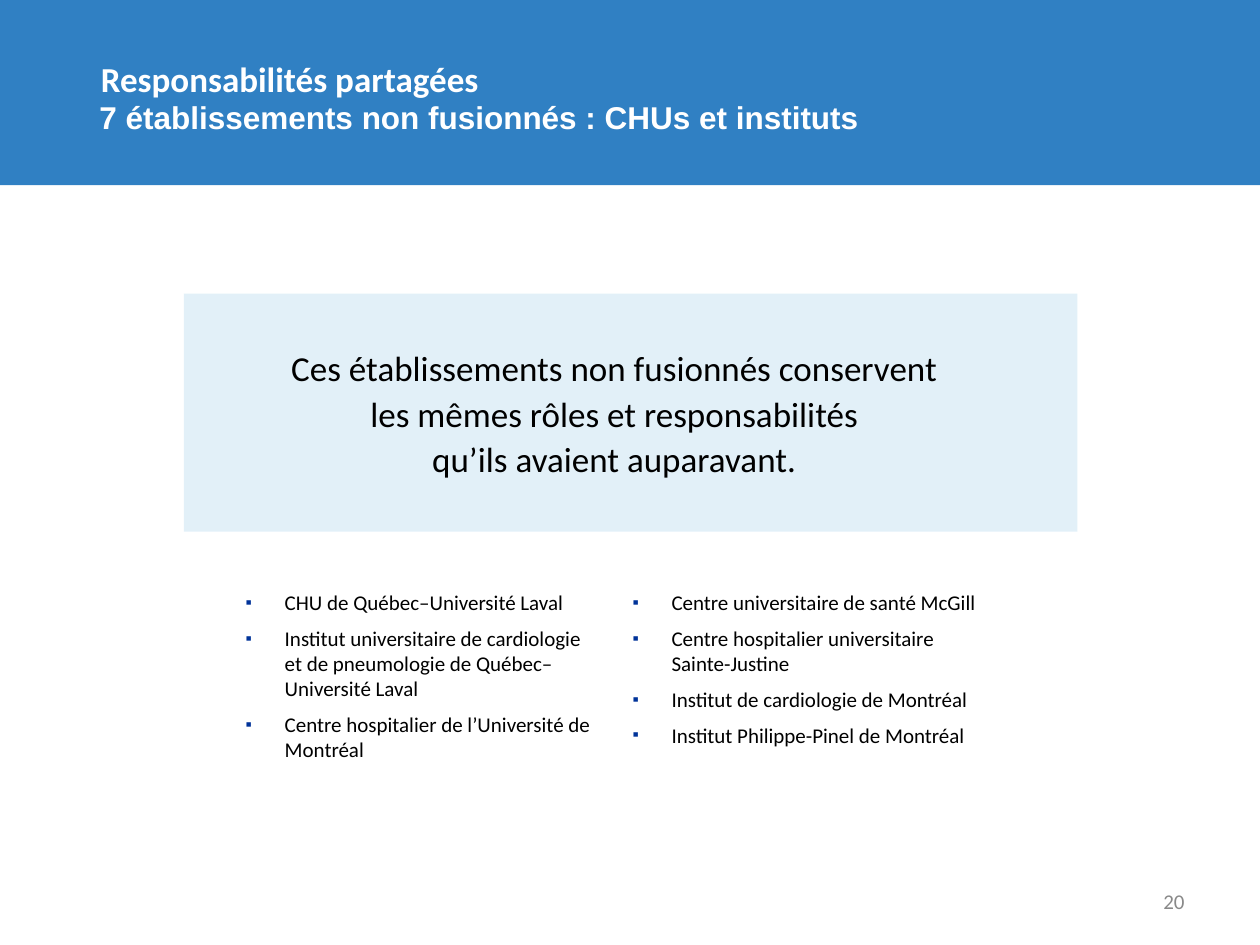
import pptx
import pptx.dml.color
import pptx.enum.shapes
import pptx.enum.text
import pptx.oxml
import pptx.oxml.ns
import pptx.util
from pptx.util import Inches

Pt = pptx.util.Pt
ALIGN = pptx.enum.text.PP_ALIGN
ANCHOR = pptx.enum.text.MSO_ANCHOR


def color(hex_value):
    return pptx.dml.color.RGBColor.from_string(hex_value)


def write(shape, box, lines, text_color, font, anchor=ANCHOR.TOP, bullet=False, **layout):
    """Place a text shape and fill it with formatted paragraphs."""
    shape.left, shape.top, shape.width, shape.height = map(Inches, box)
    frame = shape.text_frame
    frame.word_wrap = True
    frame.auto_size = pptx.enum.text.MSO_AUTO_SIZE.NONE
    frame.vertical_anchor = anchor
    frame.text = "\n".join(lines)
    for index, paragraph in enumerate(frame.paragraphs):
        if bullet:
            properties = paragraph._p.get_or_add_pPr()
            properties.set("marL", str(Inches(0.31)))
            properties.set("indent", str(-Inches(0.31)))
            for xml in BULLET:
                properties.append(pptx.oxml.parse_xml(xml))
        for name, value in layout.items():
            setattr(paragraph, name, value)
        if index == 0:
            paragraph.space_before = Pt(0)
        for run in paragraph.runs:
            for name, value in font.items():
                setattr(run.font, name, value)
            run.font.color.rgb = color(text_color)


NAMESPACE = pptx.oxml.ns.nsdecls("a")
BULLET = [
    f'<a:buClr {NAMESPACE}><a:srgbClr val="003399"/></a:buClr>',
    f'<a:buSzPct {NAMESPACE} val="85000"/>',
    f'<a:buFont {NAMESPACE} typeface="Arial"/>',
    f'<a:buChar {NAMESPACE} char="▪"/>',
]

presentation = pptx.Presentation()
presentation.slide_width = Inches(10)
presentation.slide_height = Inches(7.5)
slide = presentation.slides.add_slide(presentation.slide_layouts[3])
shapes = slide.shapes
title, *lists = slide.placeholders

# Header band and message panel, behind the text
panels = []
for box, fill in [((0, 0, 10, 1.47), "3080C3"), ((1.46, 2.33, 7.09, 1.89), "C6E3F3")]:
    panel = shapes.add_shape(pptx.enum.shapes.MSO_SHAPE.RECTANGLE, *map(Inches, box))
    panel.shadow.inherit = False
    panel.fill.solid()
    panel.fill.fore_color.rgb = color(fill)
    panel.line.fill.background()
    title._element.addprevious(panel._element)
    panels.append(panel)

# Half-transparent fill for the message panel
panel_color = panels[1]._element.spPr.find(".//" + pptx.oxml.ns.qn("a:srgbClr"))
panel_color.append(pptx.oxml.parse_xml(f'<a:alpha {NAMESPACE} val="50000"/>'))

# Title and subtitle
heading = {"anchor": ANCHOR.MIDDLE, "alignment": ALIGN.LEFT, "line_spacing": Pt(44)}
write(title, (0.7, 0.13, 8.27, 0.71), ["Responsabilités partagées"], "FFFFFF",
      {"name": "Calibri", "size": Pt(20), "bold": True}, **heading)
subtitle = shapes.add_textbox(0, 0, 0, 0)
write(subtitle, (0.69, 0.42, 8.27, 0.71),
      ["7 établissements non fusionnés : CHUs et instituts"], "FFFFFF",
      {"name": "Arial", "size": Pt(18), "bold": True}, **heading)

# Main message
message = shapes.add_textbox(0, 0, 0, 0)
write(message, (1.65, 2.73, 6.45, 1.15),
      ["Ces établissements non fusionnés conservent",
       "les mêmes rôles et responsabilités",
       "qu’ils avaient auparavant."],
      "000000", {"name": "Calibri", "size": Pt(20)}, alignment=ALIGN.CENTER,
      line_spacing=Pt(22), space_before=Pt(2), space_after=Pt(2))

# Two columns of institutions
small = {"name": "Calibri", "size": Pt(12)}
columns = [
    (1.85, 1.72, ["CHU de Québec–Université Laval",
                  "Institut universitaire de cardiologie et de pneumologie "
                  "de Québec–Université Laval",
                  "Centre hospitalier de l’Université de Montréal"]),
    (4.92, 1.6, ["Centre universitaire de santé McGill",
                 "Centre hospitalier universitaire Sainte-Justine",
                 "Institut de cardiologie de Montréal",
                 "Institut Philippe-Pinel de Montréal"]),
]
for placeholder, (left, height, institutions) in zip(lists, columns):
    write(placeholder, (left, 4.63, 2.99, height), institutions, "000000", small,
          bullet=True, space_before=Pt(6))

# Page number
page_number = shapes.add_textbox(0, 0, 0, 0)
write(page_number, (7.17, 6.95, 2.33, 0.4), ["20"], "898989", small,
      anchor=ANCHOR.MIDDLE, alignment=ALIGN.RIGHT)

presentation.save("out.pptx")
